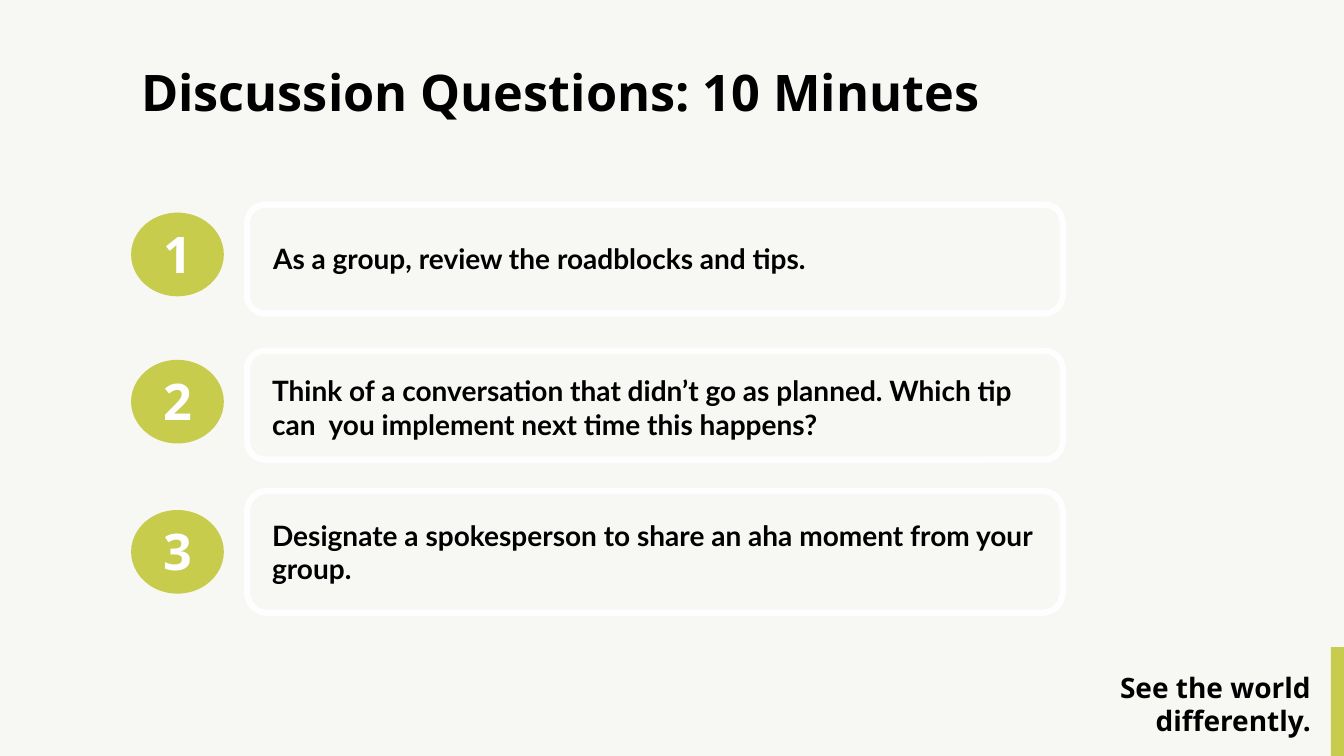
from dataclasses import dataclass

from lxml.etree import SubElement
from pptx import Presentation
from pptx.dml.color import RGBColor
from pptx.enum.shapes import MSO_SHAPE
from pptx.enum.text import MSO_ANCHOR, MSO_AUTO_SIZE, PP_ALIGN
from pptx.oxml.ns import qn
from pptx.util import Inches, Pt


@dataclass(frozen=True)
class Theme:
    background: RGBColor = RGBColor(0xF7, 0xF7, 0xF3)
    accent: RGBColor = RGBColor(0xC8, 0xCC, 0x4D)
    ink: RGBColor = RGBColor(0, 0, 0)
    white: RGBColor = RGBColor(0xFF, 0xFF, 0xFF)
    heading_font: str = "Open Sans"
    body_font: str = "Lato"
    heading_size: int = 36
    body_size: int = 20


THEME = Theme()

# badge top, frame top, frame height, text left, text top, text height, text
QUESTIONS = [
    (2.11, 2.03, 1.08, 2.61, 2.35, 0.44,
     "As a group, review the roadblocks and tips."),
    (3.57, 3.48, 1.08, 2.6, 3.66, 0.77,
     "Think of a conversation that didn’t go as planned. "
     "Which tip can  you implement next time this happens?"),
    (5.06, 4.87, 1.21, 2.6, 5.09, 0.77,
     "Designate a spokesperson to share an aha moment from your group."),
]


def inches(*lengths):
    return [Inches(length) for length in lengths]


def write(sp, text, font=THEME.heading_font, size=THEME.body_size,
          color=THEME.ink, align=PP_ALIGN.LEFT):
    tf = sp.text_frame
    tf.word_wrap = True
    tf.auto_size = MSO_AUTO_SIZE.SHAPE_TO_FIT_TEXT
    tf.vertical_anchor = MSO_ANCHOR.TOP
    p = tf.paragraphs[0]
    p.alignment = align
    p.line_spacing = 1.0
    r = p.add_run()
    r.text = text
    r.font.name = font
    r.font.size = Pt(size)
    r.font.bold = True
    r.font.color.rgb = color


def add_filled(shapes, kind, box):
    sp = shapes.add_shape(kind, *inches(*box))
    sp.shadow.inherit = False
    sp.fill.solid()
    sp.fill.fore_color.rgb = THEME.accent
    sp.line.fill.background()
    return sp


def add_title(s, box, text):
    title = s.shapes.title
    title.left, title.top, title.width, title.height = inches(*box)
    write(title, text, size=THEME.heading_size)


def add_badge(s, left, top, number):
    group = s.shapes.add_group_shape()
    add_filled(group.shapes, MSO_SHAPE.OVAL, (left, top, 0.92, 0.83))
    label = group.shapes.add_textbox(*inches(left + 0.22, top + 0.05, 0.65, 0.71))
    write(label, str(number), size=THEME.heading_size, color=THEME.white)


def add_frame(s, box):
    sp = s.shapes.add_shape(MSO_SHAPE.ROUNDED_RECTANGLE, *inches(*box))
    sp.shadow.inherit = False
    sp.fill.background()
    sp.line.color.rgb = THEME.white
    sp.line.width = Pt(4.5)
    color = sp.line._get_or_add_ln().find(".//" + qn("a:srgbClr"))
    SubElement(color, qn("a:alpha"), val="97000")


def add_question(s, number, badge_top, frame_top, frame_height,
                 text_left, text_top, text_height, text):
    add_badge(s, 1.3, badge_top, number)
    label = s.shapes.add_textbox(*inches(text_left, text_top, 7.99, text_height))
    write(label, text, font=THEME.body_font)
    add_frame(s, (2.45, frame_top, 8.09, frame_height))


def add_tagline(s, left, top, text):
    label = s.shapes.add_textbox(*inches(left, top + 0.18, 2.31, 0.77))
    write(label, text, align=PP_ALIGN.RIGHT)
    add_filled(s.shapes, MSO_SHAPE.RECTANGLE, (left + 2.41, top, 0.13, 1.08))


def main():
    prs = Presentation()
    prs.slide_width, prs.slide_height = inches(13.33, 7.5)
    s = prs.slides.add_slide(prs.slide_layouts[5])
    s.background.fill.solid()
    s.background.fill.fore_color.rgb = THEME.background

    add_tagline(s, 10.79, 6.42, "See the world differently.")
    add_title(s, (1.3, 0.56, 9.31, 0.71), "Discussion Questions: 10 Minutes")
    for number, question in enumerate(QUESTIONS, start=1):
        add_question(s, number, *question)
    prs.save("out.pptx")


if __name__ == "__main__":
    main()
